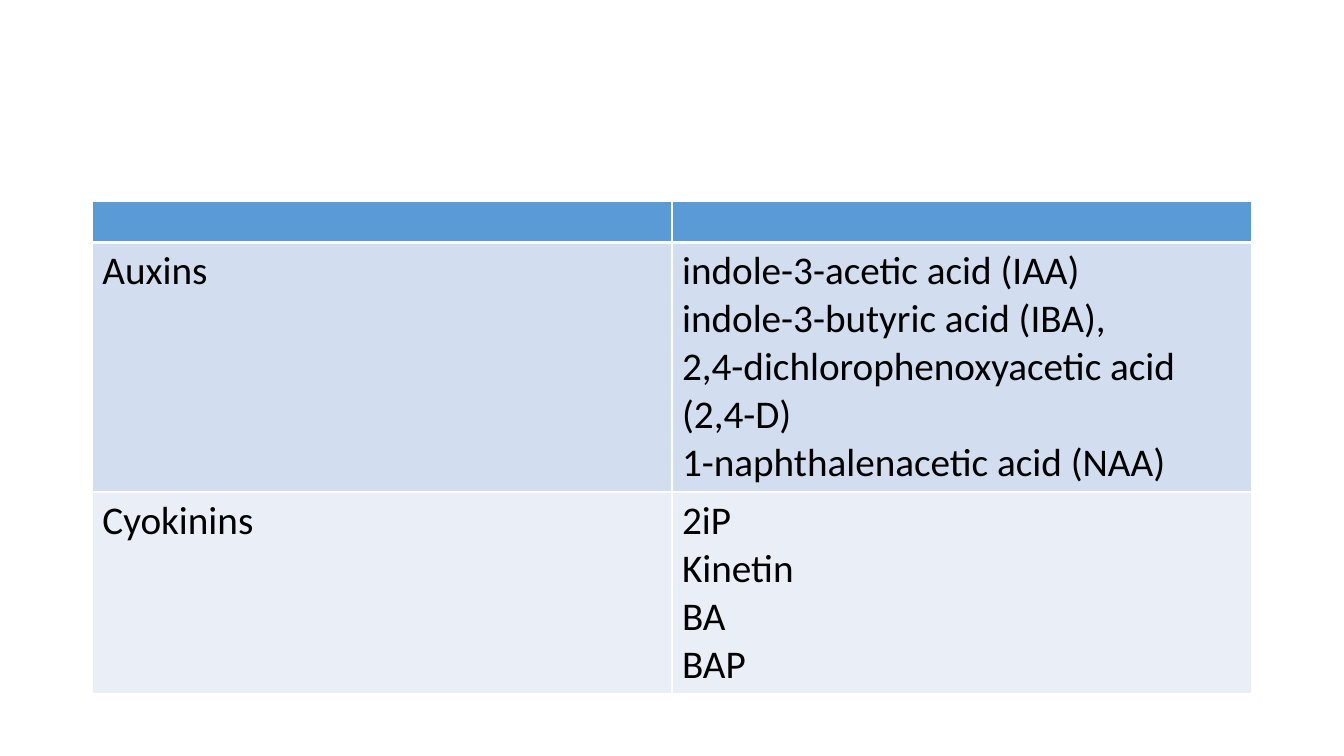
from dataclasses import dataclass

from lxml.etree import SubElement
from pptx import Presentation
from pptx.dml.color import RGBColor
from pptx.oxml.ns import qn
from pptx.util import Pt


@dataclass(frozen=True)
class Theme:
    """Colours, type and line widths of the slide."""
    header: str = "5B9BD5"
    bands: tuple = ("D2DEEF", "EAEFF7")
    text: str = "000000"
    border: str = "FFFFFF"
    font: str = "Calibri"
    size: int = 28
    thin: int = 1
    thick: int = 3


THEME = Theme()
HORMONES = [
    ("Auxins", [
        "indole-3-acetic acid (IAA)",
        "indole-3-butyric acid (IBA),",
        "2,4-dichlorophenoxyacetic acid (2,4-D)",
        "1-naphthalenacetic acid (NAA)",
    ]),
    ("Cyokinins", ["2iP", "Kinetin", "BA", "BAP"]),
]
ROW_HEIGHTS = (29.2, 178, 144)


def style_cell(cell, fill, top, bottom):
    """Give a cell its borders and fill."""
    properties = cell._tc.get_or_add_tcPr()
    widths = {"lnL": THEME.thin, "lnR": THEME.thin, "lnT": top, "lnB": bottom}
    for edge, width in widths.items():
        line = SubElement(properties, qn(f"a:{edge}"), w=str(Pt(width)))
        solid = SubElement(line, qn("a:solidFill"))
        SubElement(solid, qn("a:srgbClr"), val=THEME.border)
    cell.fill.solid()
    cell.fill.fore_color.rgb = RGBColor.from_string(fill)


def write_cell(cell, lines):
    """Write one paragraph per line into a cell."""
    cell.text = "\n".join(lines)
    font_format = {"name": THEME.font, "size": Pt(THEME.size), "bold": False}
    for paragraph in cell.text_frame.paragraphs:
        for run in paragraph.runs:
            for name, value in font_format.items():
                setattr(run.font, name, value)
            run.font.color.rgb = RGBColor.from_string(THEME.text)


def add_hormone_table(slide, left, top, width):
    """Place the table of plant hormones in the given box."""
    frame = slide.shapes.add_table(
        len(ROW_HEIGHTS), 2, Pt(left), Pt(top), Pt(width), Pt(sum(ROW_HEIGHTS)))
    table = frame.table
    for row, height in zip(table.rows, ROW_HEIGHTS):
        row.height = Pt(height)
    for index, fill in enumerate((THEME.header, *THEME.bands)):
        above = THEME.thick if index == 1 else THEME.thin
        below = THEME.thick if index == 0 else THEME.thin
        for cell in table.rows[index].cells:
            style_cell(cell, fill, above, below)
    for index, (group, compounds) in enumerate(HORMONES, start=1):
        write_cell(table.cell(index, 0), [group])
        write_cell(table.cell(index, 1), compounds)


def main():
    """Build and save the presentation."""
    presentation = Presentation()
    presentation.slide_width, presentation.slide_height = Pt(960), Pt(540)
    slide = presentation.slides.add_slide(presentation.slide_layouts[6])
    add_hormone_table(slide, left=66, top=144, width=828)
    presentation.save("out.pptx")


if __name__ == "__main__":
    main()
